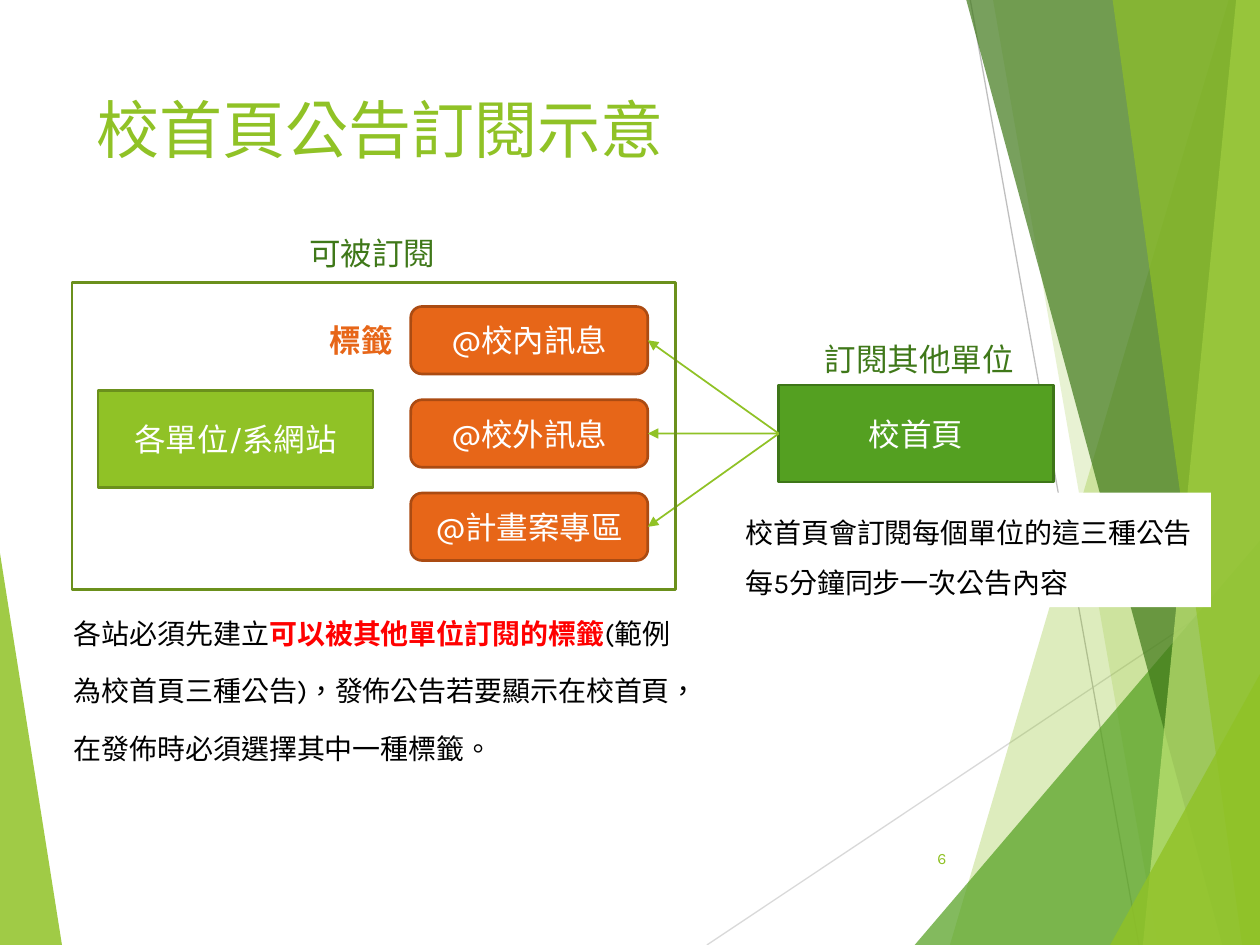
from dataclasses import dataclass

from lxml import etree
from pptx import Presentation
from pptx.dml.color import RGBColor
from pptx.enum.lang import MSO_LANGUAGE_ID
from pptx.enum.shapes import MSO_CONNECTOR, MSO_SHAPE
from pptx.enum.text import MSO_ANCHOR, PP_ALIGN
from pptx.oxml.ns import qn
from pptx.util import Cm, Pt

RECT, ROUND = MSO_SHAPE.RECTANGLE, MSO_SHAPE.ROUNDED_RECTANGLE
STRAIGHT = MSO_CONNECTOR.STRAIGHT
TOP, MIDDLE = MSO_ANCHOR.TOP, MSO_ANCHOR.MIDDLE
LEFT, CENTER, RIGHT = PP_ALIGN.LEFT, PP_ALIGN.CENTER, PP_ALIGN.RIGHT
CHINESE = MSO_LANGUAGE_ID.TRADITIONAL_CHINESE
WIDE, HIGH = 25.4, 19.05
LEFT_SIDE, RIGHT_SIDE = 1, 3


@dataclass(frozen=True)
class Theme:
    font: str = "Karla"
    lime: str = "90C226"
    pale: str = "C0E474"
    olive: str = "6B901C"
    green: str = "54A021"
    forest: str = "3E7618"
    deep: str = "3F7819"
    orange: str = "E76618"
    rust: str = "AB4B12"
    red: str = "FF0000"
    black: str = "000000"
    white: str = "FFFFFF"
    silver: str = "D9D9D9"
    gray: str = "BFBFBF"
    title: float = 36
    label: float = 18
    body: float = 16
    small: float = 9
    edge: float = 1.5
    arrow: float = 1
    hair: float = 0.75


def write(shape, *lines, size, color, bold=False, align=LEFT, anchor=TOP,
          space=None, wrap=True, font=Theme.font):
    """Fill a shape with lines; a line is text or a list of (text, color, bold)."""
    frame = shape.text_frame
    frame.word_wrap = wrap
    frame.vertical_anchor = anchor
    for index, line in enumerate(lines):
        para = frame.add_paragraph() if index else frame.paragraphs[0]
        para.alignment = align
        para.line_spacing = space
        runs = [(line, color, bold)] if isinstance(line, str) else line
        for words, tint, heavy in runs:
            run = para.add_run()
            run.text = words
            run.font.name = font
            run.font.size = Pt(size)
            run.font.bold = heavy
            run.font.color.rgb = RGBColor.from_string(tint)
            run.font.language_id = CHINESE


class Board:
    def __init__(self, slide, theme):
        self.shapes = slide.shapes
        self.theme = theme

    def paint(self, shape, fill=None, line=None):
        shape.shadow.inherit = False
        if fill:
            shape.fill.solid()
            shape.fill.fore_color.rgb = RGBColor.from_string(fill)
        else:
            shape.fill.background()
        if line:
            shape.line.color.rgb = RGBColor.from_string(line)
            shape.line.width = Pt(self.theme.edge)
        else:
            shape.line.fill.background()

    def box(self, x, y, w, h, fill=None, line=None, kind=RECT):
        shape = self.shapes.add_shape(kind, Cm(x), Cm(y), Cm(w), Cm(h))
        self.paint(shape, fill, line)
        return shape

    def node(self, text, *place, **style):
        shape = self.box(*place, **style)
        write(shape, text, size=self.theme.label, color=self.theme.white,
              align=CENTER, anchor=MIDDLE)
        return shape

    def text(self, x, y, w, h, *lines, **form):
        shape = self.shapes.add_textbox(Cm(x), Cm(y), Cm(w), Cm(h))
        write(shape, *lines, **form)

    def facet(self, points, fill, alpha):
        start, *rest = [(Cm(x), Cm(y)) for x, y in points]
        pen = self.shapes.build_freeform(*start)
        pen.add_line_segments(rest, close=True)
        shape = pen.convert_to_shape()
        self.paint(shape, fill)
        tint = shape.fill._xPr.find(".//" + qn("a:srgbClr"))
        etree.SubElement(tint, qn("a:alpha"), val=str(alpha * 1000))

    def wedge(self, top, base, fill, alpha):
        """Band from a slanted edge to the right side of the slide."""
        self.facet([(top, 0), (base, HIGH), (WIDE, HIGH), (WIDE, 0)], fill, alpha)

    def corner(self, left, top, fill, alpha):
        """Triangle in the bottom right corner."""
        self.facet([(left, HIGH), (WIDE, top), (WIDE, HIGH)], fill, alpha)

    def line(self, x1, y1, x2, y2, color, width):
        link = self.shapes.add_connector(STRAIGHT, Cm(x1), Cm(y1), Cm(x2), Cm(y2))
        link.line.color.rgb = RGBColor.from_string(color)
        link.line.width = Pt(width)
        etree.SubElement(link._element.spPr, qn("a:effectLst"))
        return link

    def arrow(self, source, target):
        link = self.line(0, 0, 1, 1, self.theme.lime, self.theme.arrow)
        link.begin_connect(source, LEFT_SIDE)
        link.end_connect(target, RIGHT_SIDE)
        etree.SubElement(link.line._get_or_add_ln(), qn("a:tailEnd"), type="triangle")


def main():
    deck = Presentation()
    deck.slide_width, deck.slide_height = Cm(WIDE), Cm(HIGH)
    look = Theme()
    board = Board(deck.slides.add_slide(deck.slide_layouts[6]), look)

    # Backdrop
    board.facet([(0, 11.15), (1.25, HIGH), (0, HIGH)], look.lime, 85)
    board.line(14.25, HIGH, WIDE, 11.61, look.silver, look.hair)
    board.line(19.56, 0, 22.96, HIGH, look.gray, look.hair)
    board.wedge(24.77, 19.15, look.lime, 30)
    board.wedge(20.02, 23.34, look.lime, 20)
    board.corner(18.44, 10.9, look.green, 72)
    board.wedge(19.48, 24.64, look.deep, 70)
    board.wedge(24.92, 23.04, look.pale, 70)
    board.wedge(22.43, 25.04, look.lime, 65)
    board.corner(22.38, 13.59, look.lime, 80)

    # Title
    board.text(1.7, 1.7, 17.63, 3.66, "校首頁公告訂閱示意",
               size=look.title, color=look.lime)

    # Sites, home page and tags
    board.node("各單位/系網站", 1.98, 7.87, 5.54, 1.96, fill=look.lime, line=look.olive)
    home = board.node("校首頁", 15.7, 7.76, 5.54, 1.96,
                      fill=look.green, line=look.forest)
    tags = [board.node(name, 8.28, 6.18 + 1.88 * row, 4.78, 1.36,
                       fill=look.orange, line=look.rust, kind=ROUND)
            for row, name in enumerate(["@校內訊息", "@校外訊息", "@計畫案專區"])]
    for tag in tags:
        board.arrow(home, tag)

    # Notes
    note = board.box(14.78, 9.93, 9.63, 2.31, fill=look.white)
    write(note, "校首頁會訂閱每個單位的這三種公告", "每5分鐘同步一次公告內容",
          size=look.body, color=look.black, space=1.5, wrap=False)
    board.text(1.24, 11.84, 12.85, 4.9,
               [("各站必須先建立", look.black, False),
                ("可以被其他單位訂閱的標籤", look.red, True),
                ("(範例為校首頁三種公告)，發佈公告若要顯示在校首頁，"
                 "在發佈時必須選擇其中一種標籤。", look.black, False)],
               size=look.body, color=look.black, space=1.7)

    # Slide number
    board.text(17.91, 16.79, 1.42, 1.02, "6", size=look.small, color=look.lime,
               align=RIGHT, anchor=MIDDLE)

    # Frame and labels
    board.box(1.45, 5.69, 12.17, 6.2, line=look.olive)
    board.text(6.4, 6.35, 1.8, 1.02, "標籤", size=look.label,
               color=look.orange, bold=True, wrap=False)
    board.text(5.99, 4.6, 3.07, 1.02, "可被訂閱", size=look.label,
               color=look.deep, wrap=False)
    board.text(16.38, 6.73, 4.37, 1.02, "訂閱其他單位", size=look.label,
               color=look.deep, wrap=False)

    deck.save("out.pptx")


if __name__ == "__main__":
    main()
